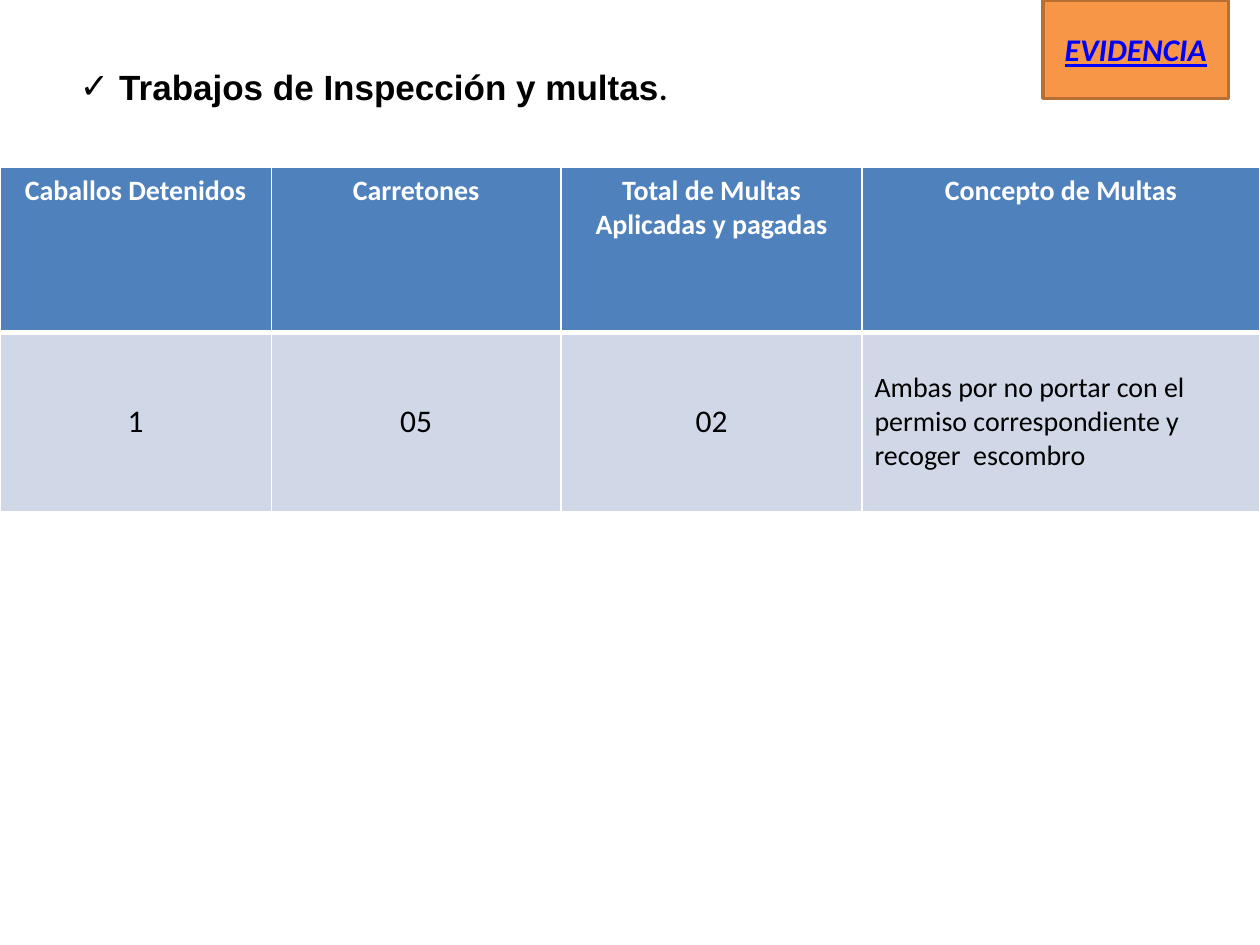
from lxml import etree
from pptx import Presentation
from pptx.dml.color import RGBColor
from pptx.enum.shapes import MSO_SHAPE
from pptx.enum.text import MSO_ANCHOR, MSO_AUTO_SIZE, PP_ALIGN
from pptx.oxml.ns import qn
from pptx.util import Pt

RECT = MSO_SHAPE.RECTANGLE
TOP, MIDDLE = MSO_ANCHOR.TOP, MSO_ANCHOR.MIDDLE
GROW = MSO_AUTO_SIZE.SHAPE_TO_FIT_TEXT
LEFT, CENTER = PP_ALIGN.LEFT, PP_ALIGN.CENTER

WIDTHS = [155, 165.6, 172, 227.4]
HEIGHTS = [94.3, 102.2]
HEADS = ["Caballos Detenidos", "Carretones",
         "Total de Multas Aplicadas y pagadas", "Concepto de Multas"]
VALUES = ["1", "05", "02",
          "Ambas por no portar con el permiso correspondiente y recoger  escombro"]


def paint(target, color):
    target.solid()
    target.fore_color.rgb = RGBColor.from_string(color)


def style(font, size, color, name="Calibri", bold=False):
    font.name, font.size, font.bold = name, Pt(size), bold
    paint(font.fill, color)


def add_edge(cell, side, width):
    props = cell._tc.get_or_add_tcPr()
    line = etree.SubElement(props, qn(f"a:ln{side}"), w=str(Pt(width)))
    fill = etree.SubElement(line, qn("a:solidFill"))
    etree.SubElement(fill, qn("a:srgbClr"), val="FFFFFF")


def fill_cell(cell, text, fill, edges, size, color, bold, align, anchor):
    for side, width in zip("LRTB", edges):
        add_edge(cell, side, width)
    paint(cell.fill, fill)
    cell.vertical_anchor = anchor
    cell.text = text
    para = cell.text_frame.paragraphs[0]
    para.alignment = align
    style(para.font, size, color, bold=bold)


def add_fines(slide):
    frame = slide.shapes.add_table(2, 4, Pt(0), Pt(95.8),
                                   Pt(sum(WIDTHS)), Pt(sum(HEIGHTS)))
    table = frame.table
    table.horz_banding = False
    for column, width in zip(table.columns, WIDTHS):
        column.width = Pt(width)
    for row, height in zip(table.rows, HEIGHTS):
        row.height = Pt(height)
    for col, (head, value) in enumerate(zip(HEADS, VALUES)):
        last = col == len(HEADS) - 1
        fill_cell(table.cell(0, col), head, "4F81BD", (1, 1, 1, 3),
                  16, "FFFFFF", True, CENTER, TOP)
        fill_cell(table.cell(1, col), value, "D0D8E8", (1, 1, 3, 1),
                  16 if last else 18, "000000", False,
                  LEFT if last else CENTER, MIDDLE)


def add_check(para, indent):
    props = para._p.get_or_add_pPr()
    props.set("marL", str(Pt(indent)))
    props.set("indent", str(-Pt(indent)))
    etree.SubElement(props, qn("a:buFont"), typeface="Arial")
    etree.SubElement(props, qn("a:buChar"), char="✓")


def set_title(slide):
    title = slide.shapes.title
    title.left, title.top = Pt(16.6), Pt(33.8)
    title.width, title.height = Pt(393.8), Pt(31.7)
    frame = title.text_frame
    frame.word_wrap = True
    frame.auto_size = GROW
    frame.vertical_anchor = TOP
    para = frame.paragraphs[0]
    para.alignment = CENTER
    add_check(para, 22.5)
    for text, size, name in [("Trabajos de Inspección y multas", 20, "Arial"),
                             (".", 18, "Calibri")]:
        run = para.add_run()
        run.text = text
        style(run.font, size, "000000", name, True)


def add_button(slide):
    button = slide.shapes.add_shape(RECT, Pt(596), Pt(0), Pt(106), Pt(56.2))
    button.shadow.inherit = False
    paint(button.fill, "F79646")
    paint(button.line.fill, "B76F34")
    button.line.width = Pt(2)
    frame = button.text_frame
    frame.text = "EVIDENCIA"
    frame.vertical_anchor = MIDDLE
    para = frame.paragraphs[0]
    para.alignment = CENTER
    style(para.font, 18, "0000FF", bold=True)
    para.font.italic = para.font.underline = True


def main():
    deck = Presentation()
    deck.slide_width, deck.slide_height = Pt(720), Pt(540)
    slide = deck.slides.add_slide(deck.slide_layouts[5])
    add_fines(slide)
    set_title(slide)
    add_button(slide)
    deck.save("out.pptx")


if __name__ == "__main__":
    main()
